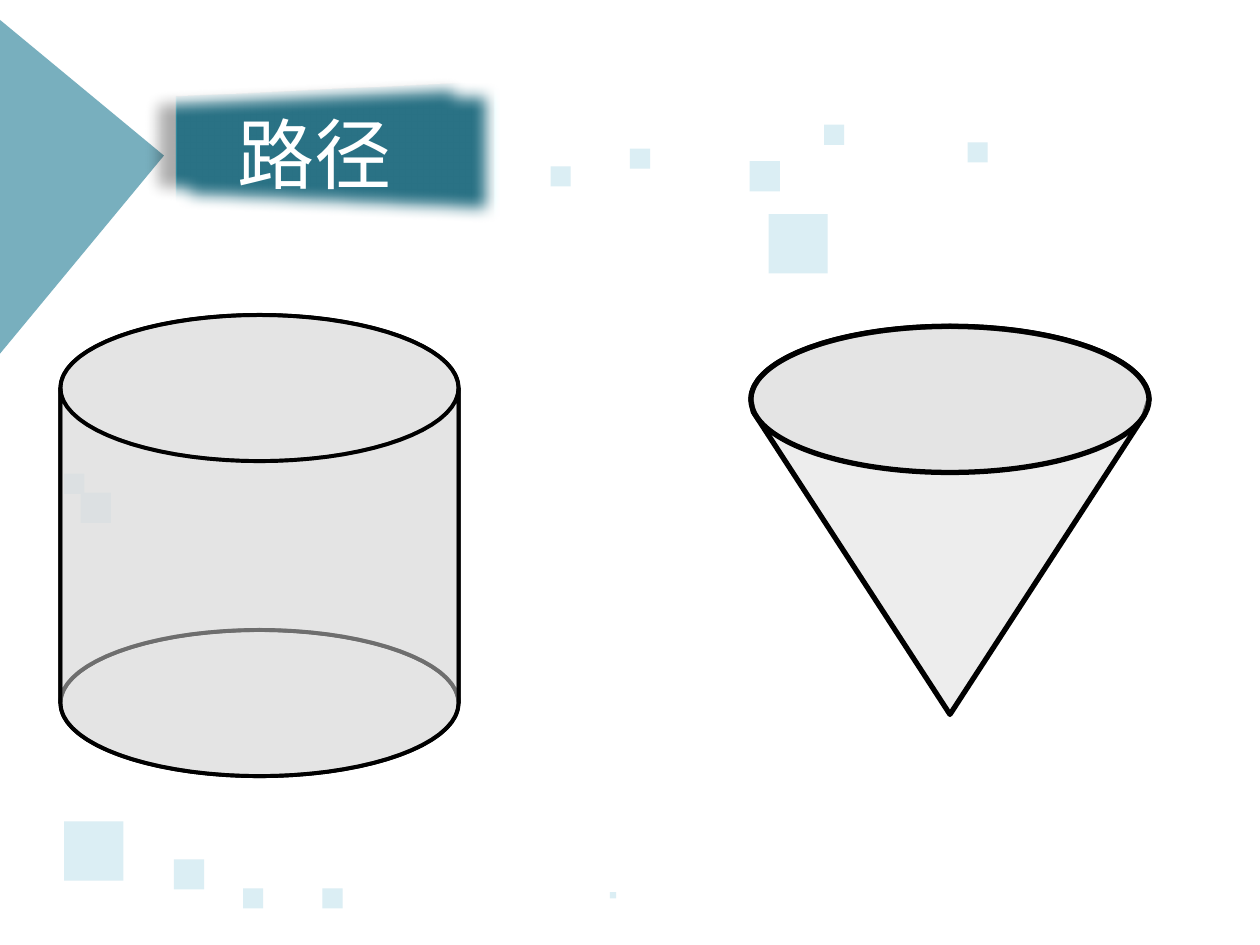
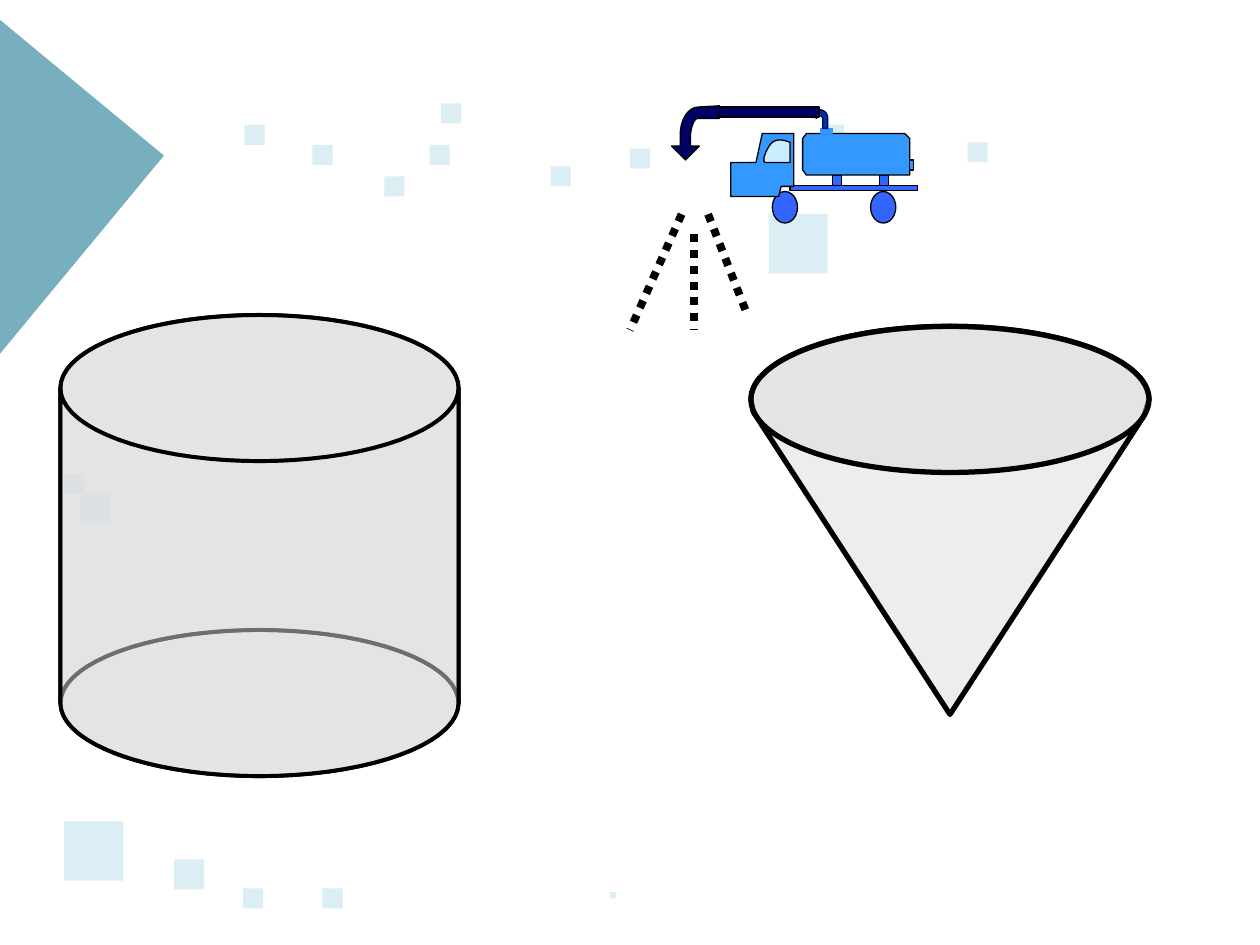
"""Build two slides that compare a cylinder with a cone, the second with a tank truck."""
from math import cos, pi, sin
from typing import NamedTuple, Optional

from lxml import etree
from pptx import Presentation
from pptx import util as u
from pptx.dml.color import RGBColor
from pptx.enum import dml, shapes, text
from pptx.oxml import parse_xml
from pptx.oxml.ns import nsdecls, qn

TEAL = RGBColor(0x31, 0x85, 0x9C)
PALE = RGBColor(0xDB, 0xEE, 0xF4)
GREY = RGBColor(0xDD, 0xDD, 0xDD)
BLACK = RGBColor(0, 0, 0)
WHITE = RGBColor(0xFF, 0xFF, 0xFF)
BLUE = RGBColor(0x33, 0x66, 0xFF)
SKY = RGBColor(0x33, 0x99, 0xFF)
GLASS = RGBColor(0xCC, 0xEC, 0xFF)
DEEP = RGBColor(0x00, 0x33, 0x99)
NAVY = RGBColor(0x00, 0x00, 0x66)

FONT = "Noto Sans CJK SC"
RECT = shapes.MSO_SHAPE.RECTANGLE
OVAL = shapes.MSO_SHAPE.OVAL
TITLE = (0.98, 0.72, 3.03, 0.98)

SQUARES = {
    0.47: [(0.51, 6.52), (6.1, 1.7)],
    0.24: [(1.38, 6.82), (0.64, 3.91), (5.95, 1.28)],
    0.16: [(2.56, 7.05), (1.93, 7.05), (6.54, 0.99), (5, 1.18),
           (4.37, 1.32), (0.51, 3.76), (7.68, 1.13)],
    0.05: [(4.84, 7.08)],
}
MORE = {0.16: [(3.41, 1.15), (2.48, 1.15), (3.5, 0.82), (3.05, 1.4), (1.94, 0.99)]}

EFFECT = f"""<a:effectLst {nsdecls('a')}>
<a:outerShdw blurRad="184150" dist="241300" dir="11520000" sx="110000" sy="110000" algn="ctr">
<a:srgbClr val="000000"><a:alpha val="18000"/></a:srgbClr></a:outerShdw>
<a:softEdge rad="112500"/></a:effectLst>"""
SCENE = f"""<a:scene3d {nsdecls('a')}>
<a:camera prst="perspectiveFront" fov="5100000"><a:rot lat="0" lon="2100000" rev="0"/></a:camera>
<a:lightRig rig="flood" dir="t"><a:rot lat="0" lon="0" rev="13800000"/></a:lightRig></a:scene3d>"""
DEPTH = f"""<a:sp3d {nsdecls('a')} extrusionH="107950" prstMaterial="plastic">
<a:bevelT w="82550" h="63500" prst="divot"/><a:bevelB/></a:sp3d>"""


class Look(NamedTuple):
    """Fill, outline and opacity of a shape."""
    fill: RGBColor
    line: Optional[RGBColor] = BLACK
    width: float = 0.75
    alpha: int = 100


class Part(NamedTuple):
    """Preset shape with its box and look."""
    kind: int
    box: tuple
    look: Look


class Form(NamedTuple):
    """Closed outline of points and cubic curves (six numbers)."""
    steps: list
    look: Look


class Disc(NamedTuple):
    """Ellipse given by its centre and radii."""
    x: float
    y: float
    rx: float
    ry: float

    def box(self) -> tuple:
        """Return left, top, width and height."""
        return self.x - self.rx, self.y - self.ry, 2 * self.rx, 2 * self.ry

    def arc(self, start: float, end: float, count: int = 36) -> list:
        """Return points from one angle to another, in half turns."""
        turns = [pi * (start + (end - start) * i / count) for i in range(count + 1)]
        return [(self.x + self.rx * cos(t), self.y + self.ry * sin(t)) for t in turns]


WALL = Look(GREY, BLACK, 2.25, 50)
CONE = Look(GREY, BLACK, 3, 50)
BASE, BODY = Look(BLUE), Look(SKY)

TOP, FOOT = (Disc(2.06, y, 1.58, 0.58) for y in (3.08, 5.58))
MOUTH = Disc(7.54, 3.17, 1.58, 0.58)

TUB = [
    Part(OVAL, FOOT.box(), WALL),
    Part(OVAL, TOP.box(), WALL),
    Form(TOP.arc(1, 2) + FOOT.arc(2, 1), WALL),
    Form(FOOT.arc(1, 0) + TOP.arc(0, 1), WALL),
]
FUNNEL = [
    Form(MOUTH.arc(1, 2) + [(9.08, 3.3), (7.54, 5.67), (5.98, 3.27)], CONE),
    Part(OVAL, MOUTH.box(), CONE),
]
TRUCK = [
    *(Part(OVAL, (x, 1.52, 0.2, 0.25), BASE) for x in (6.91, 6.13)),
    Part(RECT, (6.27, 1.47, 1.01, 0.04), BASE),
    *(Part(RECT, (x, 1.39, 0.07, 0.08), BASE) for x in (6.98, 6.61)),
    Form([(6.3, 1.48), (6.3, 1.06), (6.05, 1.06), (6, 1.29), (5.8, 1.29),
          (5.8, 1.56), (6.18, 1.56), (6.2, 1.48)], BODY),
    Form([(6.27, 1.13), (6.22, 1.11, 6.17, 1.1, 6.13, 1.13),
          (6.1, 1.15, 6.04, 1.27, 6.07, 1.29), (6.27, 1.29)], Look(GLASS)),
    Form([(7.22, 1.39), (6.4, 1.39), (6.37, 1.35), (6.37, 1.1), (6.4, 1.06),
          (7.18, 1.06), (7.22, 1.1)], BODY),
    Part(RECT, (6.51, 1.02, 0.1, 0.04), Look(SKY, SKY)),
    Part(RECT, (7.22, 1.27, 0.03, 0.08), BODY),
    Form([(6.44, 0.9), (6.48, 0.85), (6.48, 0.87), (6.5, 0.87),
          (6.54, 0.87, 6.57, 0.9, 6.57, 0.94), (6.57, 1.02), (6.53, 1.02), (6.53, 0.94),
          (6.53, 0.93, 6.52, 0.92, 6.5, 0.92), (6.48, 0.92), (6.48, 0.94)],
         Look(DEEP, NAVY)),
    Part(RECT, (5.56, 0.85, 0.94, 0.08), Look(NAVY)),
    Form([(5.44, 1.27), (5.33, 1.16), (5.4, 1.16), (5.4, 1.09),
          (5.39, 0.96, 5.46, 0.85, 5.54, 0.85), (5.71, 0.84), (5.71, 0.94), (5.54, 0.94),
          (5.51, 0.94, 5.48, 1.01, 5.48, 1.09), (5.48, 1.16), (5.55, 1.16)], Look(NAVY)),
]
SPRAY = [(5.62, 1.7, 5.92, 2.47), (5.51, 1.86, 5.51, 2.62), (5.41, 1.7, 5, 2.62)]


def paint(shape, look: Look) -> None:
    """Give a shape its fill, opacity and outline."""
    shape.shadow.inherit = False
    shape.fill.solid()
    shape.fill.fore_color.rgb = look.fill
    if look.alpha < 100:
        tint = shape.element.spPr.find(qn("a:solidFill"))[0]
        etree.SubElement(tint, qn("a:alpha")).set("val", str(look.alpha * 1000))
    if look.line is None:
        shape.line.fill.background()
    else:
        shape.line.color.rgb = look.line
        shape.line.width = u.Pt(look.width)


def put(tree, part: Part):
    """Add a preset shape."""
    shape = tree.add_shape(part.kind, *map(u.Inches, part.box))
    paint(shape, part.look)
    return shape


def trace(steps: list) -> list:
    """Turn points and cubic curves into plain points."""
    dots = []
    for step in steps:
        if len(step) == 2:
            dots.append(step)
            continue
        knots = [dots[-1], step[:2], step[2:4], step[4:]]
        for t in (i / 8 for i in range(1, 9)):
            rates = ((1 - t) ** 3, 3 * t * (1 - t) ** 2, 3 * t * t * (1 - t), t ** 3)
            dots.append(tuple(sum(r * k[a] for r, k in zip(rates, knots)) for a in (0, 1)))
    return dots


def mold(tree, form: Form) -> None:
    """Add a closed freeform."""
    first, *rest = [(u.Inches(x), u.Inches(y)) for x, y in trace(form.steps)]
    pen = tree.build_freeform(*first)
    pen.add_line_segments(rest, close=True)
    paint(pen.convert_to_shape(), form.look)


def build(slide, items: list) -> None:
    """Draw parts and forms as one group."""
    tree = slide.shapes.add_group_shape().shapes
    for item in items:
        (put if isinstance(item, Part) else mold)(tree, item)


def strew(slide, squares: dict) -> None:
    """Scatter the pale squares."""
    for size, spots in squares.items():
        for x, y in spots:
            put(slide.shapes, Part(RECT, (x, y, size, size), Look(PALE, None)))


def start(deck, index: int):
    """Add a slide with the shared backdrop."""
    slide = deck.slides.add_slide(deck.slide_layouts[index])
    wedge = Part(RECT, (-1.6, 0.19, 2.41, 2.41), Look(TEAL, None, alpha=65))
    put(slide.shapes, wedge).rotation = 39.6
    strew(slide, SQUARES)
    return slide


def head(slide, words: str) -> None:
    """Set the title on its soft raised panel."""
    panel = put(slide.shapes, Part(RECT, TITLE, Look(TEAL, None)))
    props = panel.element.spPr
    props.remove(props.find(qn("a:effectLst")))
    for xml in (EFFECT, SCENE, DEPTH):
        props.append(parse_xml(xml))
    title = slide.shapes.title
    slide.shapes.element.append(title.element)
    for name, size in zip(("left", "top", "width", "height"), TITLE):
        setattr(title, name, u.Inches(size))
    frame = title.text_frame
    frame.text = words
    para = frame.paragraphs[0]
    font = para.runs[0].font
    styles = [
        (frame, {"vertical_anchor": text.MSO_ANCHOR.MIDDLE, "word_wrap": True,
                 "auto_size": text.MSO_AUTO_SIZE.NONE}),
        (para, {"alignment": text.PP_ALIGN.CENTER}),
        (font, {"size": u.Pt(44), "name": FONT}),
    ]
    for target, values in styles:
        for name, value in values.items():
            setattr(target, name, value)
    font.color.rgb = WHITE
    props = para.runs[0].font._element
    etree.SubElement(props, qn("a:ea")).set("typeface", FONT)


def spray(slide) -> None:
    """Draw the dotted jets below the hose."""
    tree = slide.shapes.add_group_shape().shapes
    for ends in SPRAY:
        jet = tree.add_connector(shapes.MSO_CONNECTOR.STRAIGHT, *map(u.Inches, ends))
        jet.line.color.rgb = BLACK
        jet.line.width = u.Pt(4.5)
        jet.line.dash_style = dml.MSO_LINE.ROUND_DOT
        etree.SubElement(jet.element.spPr, qn("a:effectLst"))


def main() -> None:
    """Build and save the deck."""
    deck = Presentation()
    deck.slide_width, deck.slide_height = u.Inches(10), u.Inches(7.5)

    first = start(deck, 5)
    head(first, "路径")

    second = start(deck, 6)
    strew(second, MORE)

    for slide in (first, second):
        build(slide, TUB)
        build(slide, FUNNEL)
    build(second, TRUCK)
    spray(second)
    deck.save("out.pptx")


if __name__ == "__main__":
    main()
